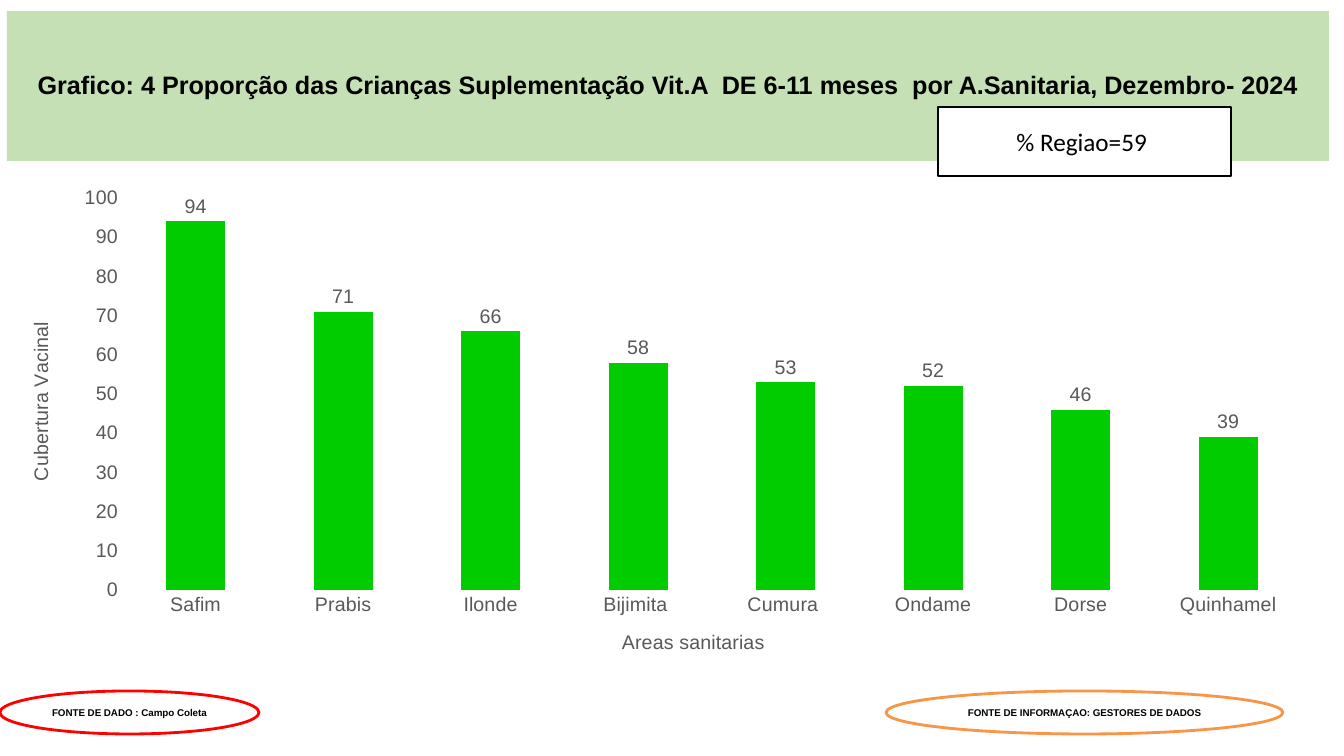
from dataclasses import dataclass

from pptx import Presentation
from pptx.chart.data import CategoryChartData
from pptx.dml.color import RGBColor
from pptx.enum.chart import XL_CHART_TYPE, XL_LABEL_POSITION, XL_TICK_MARK
from pptx.enum.shapes import MSO_SHAPE
from pptx.enum.text import MSO_ANCHOR, PP_ALIGN
from pptx.oxml import parse_xml
from pptx.oxml.ns import nsdecls
from pptx.util import Pt

COLUMNS = XL_CHART_TYPE.COLUMN_CLUSTERED
OUTSIDE_END = XL_LABEL_POSITION.OUTSIDE_END
NO_TICKS = XL_TICK_MARK.NONE
RECTANGLE, ELLIPSE = MSO_SHAPE.RECTANGLE, MSO_SHAPE.OVAL
MIDDLE, CENTER = MSO_ANCHOR.MIDDLE, PP_ALIGN.CENTER


@dataclass(frozen=True)
class Theme:
    black: str = "000000"
    white: str = "FFFFFF"
    gray: str = "595959"
    band: str = "C5E0B4"
    bar: str = "00CC00"
    red: str = "FF0000"
    orange: str = "F79646"
    heading_size: int = 18
    chart_size: int = 14
    source_size: int = 7
    font: str = "Arial"
    badge_font: str = "Calibri"


THEME = Theme()

TITLE = ("Grafico: 4 Proporção das Crianças Suplementação Vit.A  DE 6-11 meses  "
         "por A.Sanitaria, Dezembro- 2024")
REGION = "% Regiao=59 "
COVERAGE = {"Safim": 94, "Prabis": 71, "Ilonde": 66, "Bijimita ": 58,
            "Cumura ": 53, "Ondame": 52, "Dorse": 46, "Quinhamel": 39}
AREA_AXIS, COVERAGE_AXIS = "Areas sanitarias", "Cubertura Vacinal"
# text, left, width, line colour
SOURCES = [
    ("FONTE DE DADO : Campo Coleta", 0, 259, THEME.red),
    ("FONTE DE INFORMAÇAO: GESTORES DE DADOS", 886, 397, THEME.orange),
]

# left, top, width, height in px
SLIDE_WIDTH, SLIDE_HEIGHT = 1344, 756
TITLE_BOX = (7, 11, 1322, 150)
BADGE_BOX = (938, 107, 293, 69)
CHART_BOX = (7, 176, 1322, 500)
PLOT_BOX = (122, 198, 1180, 392)
SOURCE_TOP, SOURCE_HEIGHT = 691, 43
EMU_PER_PX = 914400 / 100.8


def emu(*lengths):
    return [round(length * EMU_PER_PX) for length in lengths]


def rgb(color):
    return RGBColor.from_string(color)


def format_font(font, size, color=THEME.black, name=THEME.font, bold=False):
    font.size, font.name, font.bold = Pt(size), name, bold
    font.color.rgb = rgb(color)


def write_text(text_frame, text, spacing=None, **font_format):
    text_frame.text = text
    text_frame.word_wrap = True
    text_frame.vertical_anchor = MIDDLE
    paragraph = text_frame.paragraphs[0]
    paragraph.alignment = CENTER
    paragraph.line_spacing = spacing
    format_font(paragraph.runs[0].font, **font_format)


def add_outlined_shape(slide, kind, box, text, line_color, line_width, **font_format):
    shape = slide.shapes.add_shape(kind, *emu(*box))
    shape.shadow.inherit = False
    shape.fill.solid()
    shape.fill.fore_color.rgb = rgb(THEME.white)
    shape.line.color.rgb = rgb(line_color)
    shape.line.width = Pt(line_width)
    write_text(shape.text_frame, text, **font_format)


def add_title(slide):
    title = slide.shapes.title
    title.left, title.top, title.width, title.height = emu(*TITLE_BOX)
    title.fill.solid()
    title.fill.fore_color.rgb = rgb(THEME.band)
    write_text(title.text_frame, TITLE, spacing=0.9, size=THEME.heading_size, bold=True)


def format_axis(axis, title):
    axis.has_major_gridlines = False
    axis.major_tick_mark = axis.minor_tick_mark = NO_TICKS
    axis.format.line.fill.background()
    format_font(axis.tick_labels.font, THEME.chart_size, THEME.gray)
    title_frame = axis.axis_title.text_frame
    title_frame.text = title
    format_font(title_frame.paragraphs[0].runs[0].font, THEME.chart_size, THEME.gray)


def place_plot(chart):
    """Fix the inner plot area as fractions of the chart box."""
    left, top, width, height = CHART_BOX
    plot_left, plot_top, plot_width, plot_height = PLOT_BOX
    fractions = {"x": (plot_left - left) / width, "y": (plot_top - top) / height,
                 "w": plot_width / width, "h": plot_height / height}
    modes = "".join(f'<c:{key}Mode val="edge"/>' for key in "xy")
    values = "".join(f'<c:{key} val="{value:.4f}"/>' for key, value in fractions.items())
    layout = parse_xml(f'<c:layout {nsdecls("c")}><c:manualLayout>'
                       f'<c:layoutTarget val="inner"/>{modes}{values}'
                       '</c:manualLayout></c:layout>')
    plot_area = chart.plots[0]._element.getparent()
    for automatic in plot_area.findall(layout.tag):
        plot_area.remove(automatic)
    plot_area.insert(0, layout)


def add_coverage_chart(slide):
    data = CategoryChartData(number_format="0")
    data.categories = list(COVERAGE)
    data.add_series(COVERAGE_AXIS, list(COVERAGE.values()))
    chart = slide.shapes.add_chart(COLUMNS, *emu(*CHART_BOX), data).chart
    chart.has_title = chart.has_legend = False
    format_font(chart.font, THEME.chart_size)

    format_axis(chart.category_axis, AREA_AXIS)
    value_axis = chart.value_axis
    format_axis(value_axis, COVERAGE_AXIS)
    value_axis.minimum_scale, value_axis.maximum_scale = 0, 100
    value_axis.major_unit = 10

    plot = chart.plots[0]
    plot.gap_width = 150
    plot.vary_by_categories = False
    fill = plot.series[0].format.fill
    fill.solid()
    fill.fore_color.rgb = rgb(THEME.bar)
    plot.has_data_labels = True
    labels = plot.data_labels
    labels.show_value = True
    labels.position = OUTSIDE_END
    format_font(labels.font, THEME.chart_size, THEME.gray)
    place_plot(chart)


def main():
    presentation = Presentation()
    presentation.slide_width, presentation.slide_height = emu(SLIDE_WIDTH, SLIDE_HEIGHT)
    slide = presentation.slides.add_slide(presentation.slide_layouts.get_by_name("Title Only"))
    add_title(slide)
    add_outlined_shape(slide, RECTANGLE, BADGE_BOX, REGION, THEME.black, 1,
                       size=THEME.heading_size, name=THEME.badge_font)
    for text, left, width, color in SOURCES:
        add_outlined_shape(slide, ELLIPSE, (left, SOURCE_TOP, width, SOURCE_HEIGHT),
                           text, color, 2, size=THEME.source_size, bold=True)
    add_coverage_chart(slide)
    presentation.save("out.pptx")


if __name__ == "__main__":
    main()
